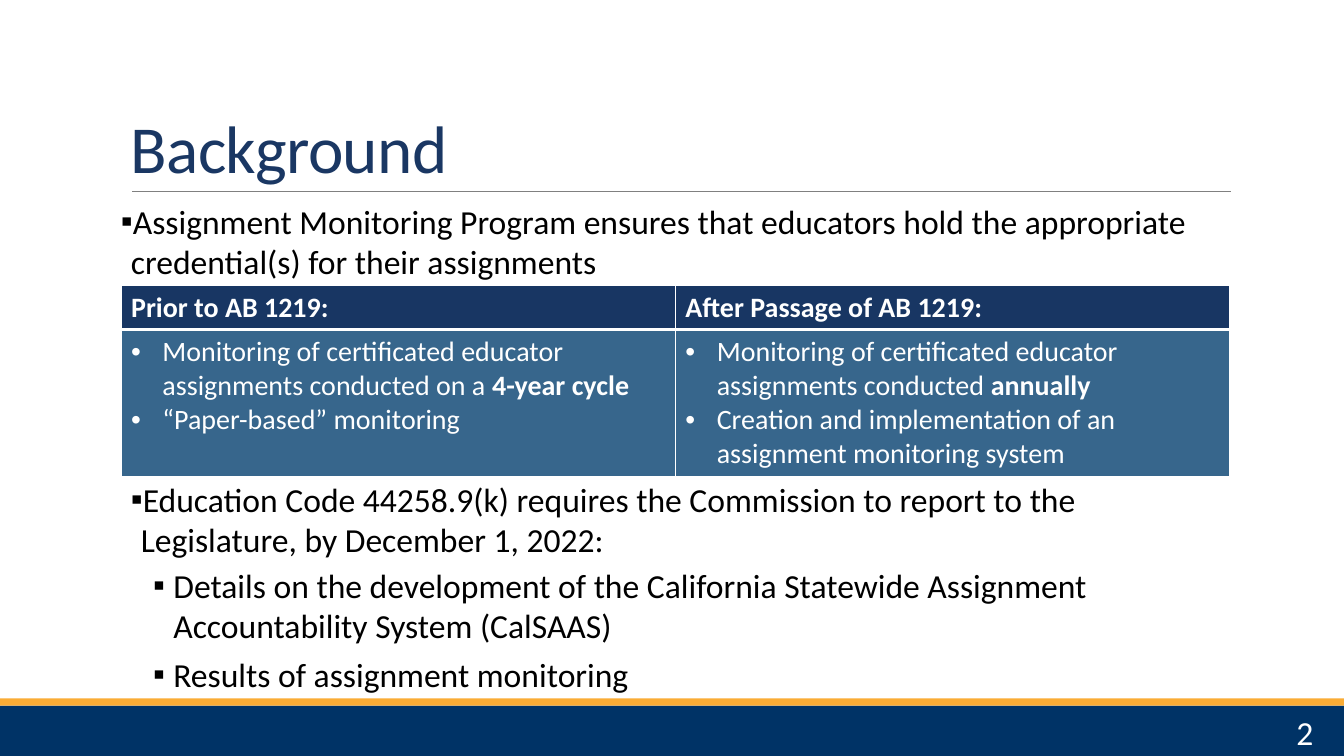
"""Build the Background slide on the Assignment Monitoring Program."""
from dataclasses import dataclass

from lxml import etree
from pptx import Presentation
from pptx.dml.color import RGBColor
from pptx.enum.shapes import MSO_CONNECTOR, MSO_SHAPE
from pptx.enum.text import MSO_ANCHOR, PP_ALIGN
from pptx.oxml.ns import qn
from pptx.util import Cm, Pt

RECT = MSO_SHAPE.RECTANGLE
STRAIGHT = MSO_CONNECTOR.STRAIGHT
TOP, MIDDLE, BOTTOM = MSO_ANCHOR.TOP, MSO_ANCHOR.MIDDLE, MSO_ANCHOR.BOTTOM
LEFT, RIGHT = PP_ALIGN.LEFT, PP_ALIGN.RIGHT

COLORS = {"navy": "003366", "gold": "FAAC35", "rule": "808080", "title": "1A3763",
          "text": "000000", "white": "FFFFFF", "header": "183663", "cell": "37668C"}
FONT = "Calibri"
WIDTH, HEIGHT = 33.87, 19.05
CONTENT_LEFT, CONTENT_WIDTH = 3.05, 27.94
SQUARE, DOT = "▪", "•"


@dataclass
class Bar:
    color: str
    top: float
    height: float


@dataclass
class Para:
    runs: tuple[str, ...]
    fmt: dict
    bullet: str = ""
    margin: float = 0
    hanging: float = 0
    level: int = 0


@dataclass
class TextBlock:
    box: tuple[float, float, float, float]
    size: int
    color: str
    paras: tuple[Para, ...]
    anchor: MSO_ANCHOR = TOP
    inset: float = 0.25
    tracking: int = 0


def rgb(name: str) -> RGBColor:
    return RGBColor.from_string(COLORS[name])


def square(text: str, before: int, after: int, margin: float, hanging: float, level: int = 0) -> Para:
    fmt = {"space_before": Pt(before), "space_after": Pt(after)}
    return Para((text,), fmt, SQUARE, margin, hanging, level)


def dot(*runs: str) -> Para:
    return Para(runs, {}, DOT, 0.79, 0.79)


BARS = (Bar("navy", 17.78, 1.27), Bar("gold", 17.6, 0.18))
BLOCKS = (
    TextBlock((CONTENT_LEFT, 0.81, CONTENT_WIDTH, 4.04), 48, "title",
              (Para(("Background",), {"line_spacing": 0.85}),), BOTTOM, tracking=-50),
    TextBlock((CONTENT_LEFT, 4.93, CONTENT_WIDTH, 2.49), 24, "text", (
        square("Assignment Monitoring Program ensures that educators hold the appropriate "
               "credential(s) for their assignments", 0, 2, 0.25, 0.25),), inset=0),
    TextBlock((CONTENT_LEFT, 11.94, CONTENT_WIDTH, 5.74), 24, "text", (
        square("Education Code 44258.9(k) requires the Commission to report to the "
               "Legislature, by December 1, 2022:", 0, 2, 0.25, 0.25),
        square("Details on the development of the California Statewide Assignment "
               "Accountability System (CalSAAS)", 2, 4, 1.07, 0.51, 1),
        square("Results of assignment monitoring", 2, 4, 1.07, 0.51, 1))),
    TextBlock((29.72, 17.93, 3.63, 1.02), 24, "white",
              (Para(("2",), {"alignment": RIGHT}),), MIDDLE),
)
HEADERS = ("Prior to AB 1219:", "After Passage of AB 1219:")
DETAILS = (
    (dot("Monitoring of certificated educator assignments conducted on a ", "4-year cycle"),
     dot("“Paper-based” monitoring")),
    (dot("Monitoring of certificated educator assignments conducted ", "annually"),
     dot("Creation and implementation of an assignment monitoring system")),
)


def write(tf, paras: tuple[Para, ...], size: int, color: str,
          header: bool = False, tracking: int = 0) -> None:
    for i, para in enumerate(paras):
        p = tf.add_paragraph() if i else tf.paragraphs[0]
        p.level = para.level
        for name, value in ({"alignment": LEFT} | para.fmt).items():
            setattr(p, name, value)
        if para.bullet:
            props = p._p.get_or_add_pPr()
            props.set("marL", str(Cm(para.margin)))
            props.set("indent", str(-Cm(para.hanging)))
            etree.SubElement(props, qn("a:buFont")).set("typeface", "Arial")
            etree.SubElement(props, qn("a:buChar")).set("char", para.bullet)
        for n, text in enumerate(para.runs):
            r = p.add_run()
            r.text = text
            fmt = {"name": FONT, "size": Pt(size), "bold": header or n == 1}
            for name, value in fmt.items():
                setattr(r.font, name, value)
            r.font.color.rgb = rgb(color)
            if tracking:
                r._r.get_or_add_rPr().set("spc", str(tracking))


def add_bar(s, bar: Bar) -> None:
    sp = s.shapes.add_shape(RECT, 0, Cm(bar.top), Cm(WIDTH), Cm(bar.height))
    sp.shadow.inherit = False
    sp.fill.solid()
    sp.fill.fore_color.rgb = rgb(bar.color)
    sp.line.fill.background()


def add_rule(s) -> None:
    line = s.shapes.add_connector(STRAIGHT, Cm(3.33), Cm(4.83), Cm(31.01), Cm(4.83))
    line.line.color.rgb = rgb("rule")
    line.line.width = Pt(0.5)
    etree.SubElement(line._element.spPr, qn("a:effectLst"))


def add_text(s, block: TextBlock) -> None:
    tf = s.shapes.add_textbox(*map(Cm, block.box)).text_frame
    fmt = {"word_wrap": True, "vertical_anchor": block.anchor,
           "margin_left": Cm(block.inset), "margin_right": Cm(block.inset)}
    for name, value in fmt.items():
        setattr(tf, name, value)
    write(tf, block.paras, block.size, block.color, tracking=block.tracking)


def style_cell(cell, fill: str, borders: dict[str, int]) -> None:
    props = cell._tc.get_or_add_tcPr()
    for side, width in borders.items():
        ln = etree.SubElement(props, qn(f"a:ln{side}"), w=str(Pt(width)))
        solid = etree.SubElement(ln, qn("a:solidFill"))
        etree.SubElement(solid, qn("a:srgbClr"), val=COLORS["white"])
    cell.fill.solid()
    cell.fill.fore_color.rgb = rgb(fill)


def add_comparison(s) -> None:
    table = s.shapes.add_table(2, 2, Cm(CONTENT_LEFT), Cm(7.19),
                               Cm(CONTENT_WIDTH), Cm(4.81)).table
    table.horz_banding = False
    for row, height in zip(table.rows, (1.11, 3.7)):
        row.height = Cm(height)
    for col, (header, details) in enumerate(zip(HEADERS, DETAILS)):
        top, body = table.cell(0, col), table.cell(1, col)
        style_cell(top, "header", {"L": 1, "R": 1, "T": 1, "B": 3})
        style_cell(body, "cell", {"L": 1, "R": 1, "T": 3, "B": 1})
        write(top.text_frame, (Para((header,), {}),), 20, "white", header=True)
        write(body.text_frame, details, 20, "white")


def main() -> None:
    prs = Presentation()
    prs.slide_width, prs.slide_height = Cm(WIDTH), Cm(HEIGHT)
    s = prs.slides.add_slide(prs.slide_layouts[6])
    for bar in BARS:
        add_bar(s, bar)
    add_rule(s)
    title, intro, report, number = BLOCKS
    add_text(s, title)
    add_text(s, intro)
    add_comparison(s)
    add_text(s, report)
    add_text(s, number)
    prs.save("out.pptx")


if __name__ == "__main__":
    main()
